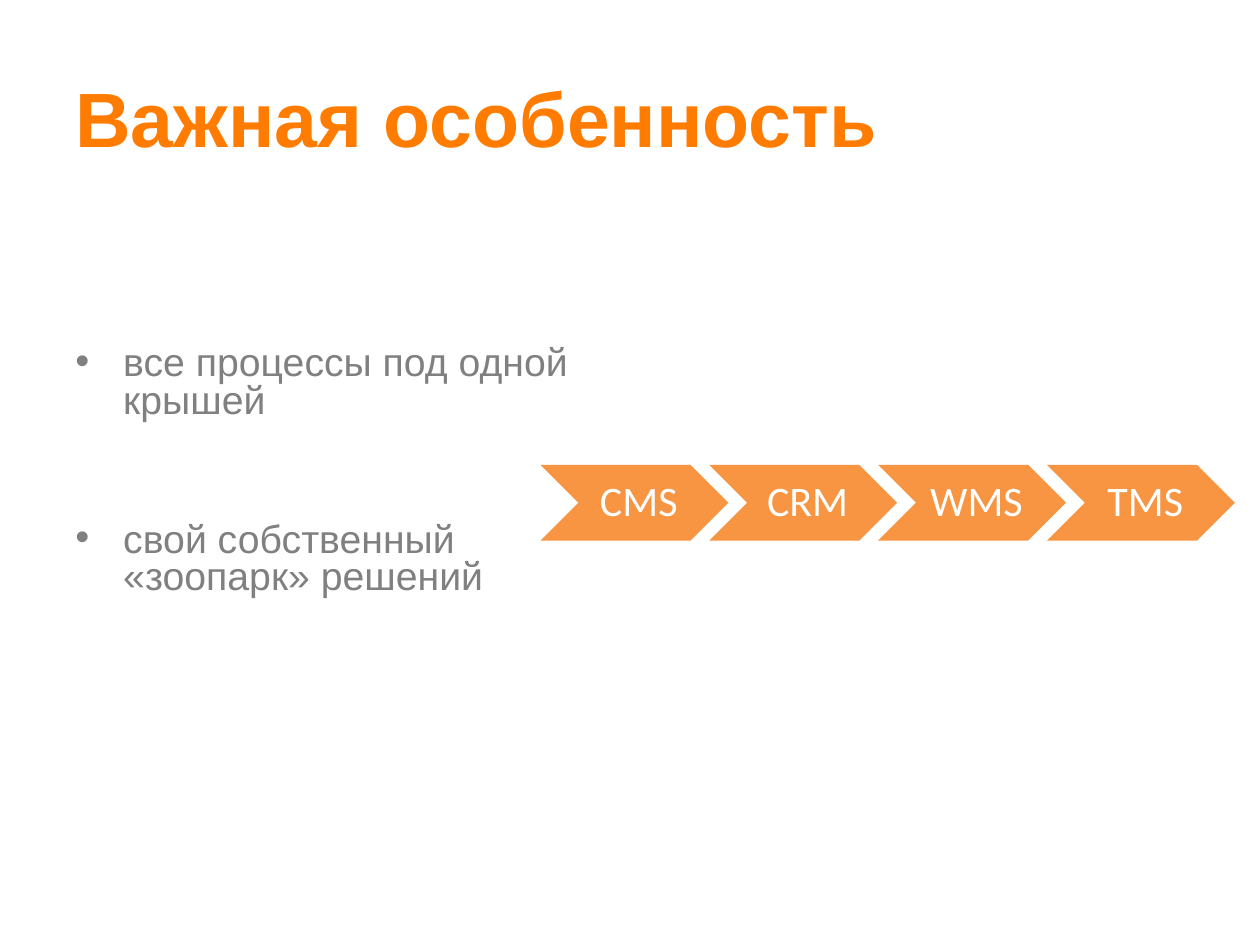
"""Build a slide with a title, two bullets and a chain of system chevrons."""
from dataclasses import dataclass
from typing import Any

from lxml import etree
from pptx import Presentation
from pptx import util as u
from pptx.dml.color import RGBColor
from pptx.enum import shapes, text
from pptx.oxml.ns import qn


@dataclass(frozen=True)
class Theme:
    title_color: str = "FF7C00"
    body_color: str = "808080"
    chevron_fill: str = "F79543"
    chevron_text: str = "FFFFFF"
    text_font: str = "Arial"
    chevron_font: str = "Calibri"
    title_size: float = 44
    body_size: float = 22.4
    chevron_size: float = 24


@dataclass(frozen=True)
class Box:
    left: float
    top: float
    width: float
    height: float

    def lengths(self) -> tuple[u.Length, ...]:
        return tuple(u.Inches(v) for v in (self.left, self.top, self.width, self.height))


@dataclass(frozen=True)
class Style:
    font: str
    size: float
    color: str
    bold: bool = False


THEME = Theme()
TITLE_STYLE = Style(THEME.text_font, THEME.title_size, THEME.title_color, True)
BODY_STYLE = Style(THEME.text_font, THEME.body_size, THEME.body_color)
CHEVRON_STYLE = Style(THEME.chevron_font, THEME.chevron_size, THEME.chevron_text)

TITLE = "Важная особенность"
BULLETS = ["все процессы под одной крышей", "свой собственный «зоопарк» решений"]
SYSTEMS = ["CMS", "CRM", "WMS", "TMS"]
FIRST_CHEVRON = Box(4.29, 3.69, 1.49, 0.6)
CHEVRON_STEP = 1.34
BULLET_INDENT = 0.38
BULLET_GAP = 58


def assign(target: Any, values: dict[str, Any]) -> None:
    """Set each named attribute on the target."""
    for name, value in values.items():
        setattr(target, name, value)


def write(p: Any, content: str, style: Style) -> None:
    """Add one styled run to a paragraph."""
    r = p.add_run()
    r.text = content
    assign(r.font, {"name": style.font, "size": u.Pt(style.size), "bold": style.bold})
    r.font.color.rgb = RGBColor.from_string(style.color)


def add_bullet(p: Any) -> None:
    """Give a paragraph a hanging round bullet."""
    p_pr = p._p.get_or_add_pPr()
    p_pr.set("marL", str(u.Inches(BULLET_INDENT)))
    p_pr.set("indent", str(-u.Inches(BULLET_INDENT)))
    color = etree.SubElement(p_pr, qn("a:buClr"))
    etree.SubElement(color, qn("a:srgbClr"), val=THEME.body_color)
    etree.SubElement(p_pr, qn("a:buSzPct"), val="102000")
    etree.SubElement(p_pr, qn("a:buFont"), typeface=THEME.text_font)
    etree.SubElement(p_pr, qn("a:buChar"), char="•")


def draw_title(s: Any, box: Box) -> None:
    """Draw the slide title."""
    tf = s.shapes.add_textbox(*box.lengths()).text_frame
    assign(tf, {"word_wrap": True, "vertical_anchor": text.MSO_ANCHOR.MIDDLE})
    write(tf.paragraphs[0], TITLE, TITLE_STYLE)


def draw_bullets(s: Any, box: Box) -> None:
    """Draw the bullet list."""
    tf = s.shapes.add_textbox(*box.lengths()).text_frame
    tf.word_wrap = True
    for i, content in enumerate(BULLETS):
        p = tf.add_paragraph() if i else tf.paragraphs[0]
        p.line_spacing = 0.8
        if i:
            p.space_before = u.Pt(BULLET_GAP)
        add_bullet(p)
        write(p, content, BODY_STYLE)


def draw_chevron(s: Any, box: Box, label: str) -> None:
    """Draw one labelled chevron."""
    sp = s.shapes.add_shape(shapes.MSO_SHAPE.CHEVRON, *box.lengths())
    sp.shadow.inherit = False
    sp.fill.solid()
    sp.fill.fore_color.rgb = RGBColor.from_string(THEME.chevron_fill)
    sp.line.fill.background()
    tf = sp.text_frame
    assign(tf, {
        "word_wrap": True,
        "vertical_anchor": text.MSO_ANCHOR.MIDDLE,
        "margin_left": u.Inches(0.1),
        "margin_right": u.Inches(0.03),
        "margin_top": u.Inches(0.03),
        "margin_bottom": u.Inches(0.03),
    })
    p = tf.paragraphs[0]
    assign(p, {"alignment": text.PP_ALIGN.CENTER, "line_spacing": 0.9})
    write(p, label, CHEVRON_STYLE)


def main() -> None:
    """Build and save the slide."""
    prs = Presentation()
    assign(prs, {"slide_width": u.Inches(10), "slide_height": u.Inches(7.5)})
    s = prs.slides.add_slide(prs.slide_layouts[6])
    draw_title(s, Box(0.5, 0.3, 9, 1.25))
    draw_bullets(s, Box(0.5, 2.7, 4.5, 2.31))
    first = FIRST_CHEVRON
    for i, label in enumerate(SYSTEMS):
        left = first.left + i * CHEVRON_STEP
        draw_chevron(s, Box(left, first.top, first.width, first.height), label)
    prs.save("out.pptx")


if __name__ == "__main__":
    main()
